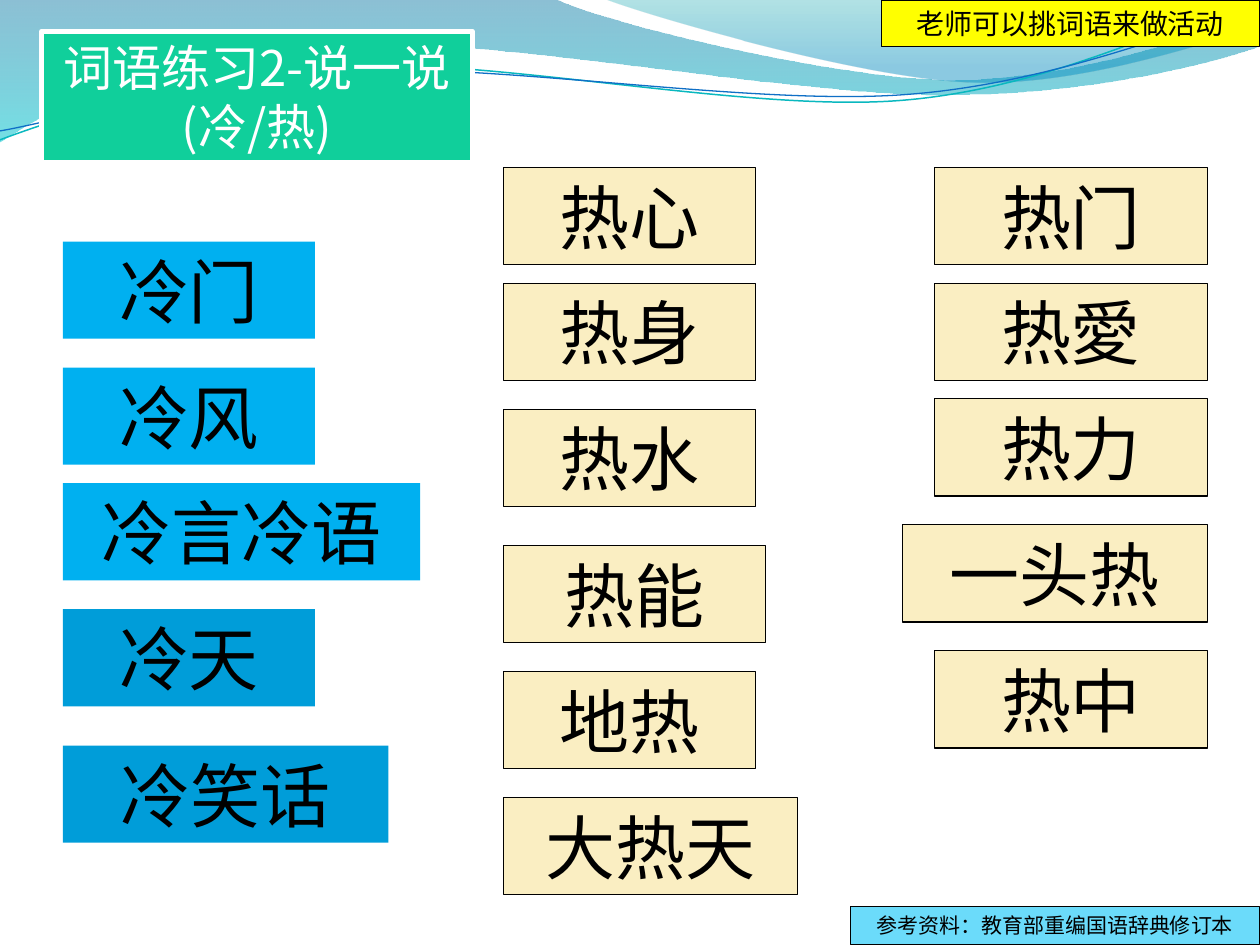
from lxml.etree import SubElement
from pptx import Presentation
from pptx.dml.color import RGBColor
from pptx.enum.shapes import MSO_SHAPE
from pptx.enum.text import MSO_ANCHOR, MSO_AUTO_SIZE, PP_ALIGN
from pptx.oxml.ns import qn
from pptx.util import Cm, Pt

FONT = "Noto Sans CJK SC"
BLACK = RGBColor(0x00, 0x00, 0x00)
WHITE = RGBColor(0xFF, 0xFF, 0xFF)
CREAM = RGBColor(0xFA, 0xEE, 0xC2)
SKY = RGBColor(0x00, 0xB0, 0xF0)
BLUE = RGBColor(0x00, 0x9D, 0xD9)
GREEN = RGBColor(0x10, 0xCF, 0x9B)
YELLOW = RGBColor(0xFF, 0xFF, 0x00)
AQUA = RGBColor(0x6B, 0xDB, 0xFA)
DEEP = RGBColor(0x00, 0x74, 0xA1)
CYAN = RGBColor(0x00, 0xC6, 0xCF)
TEAL = RGBColor(0x00, 0xA1, 0xA9)
AZURE = RGBColor(0x00, 0x8B, 0xBF)
MINT = RGBColor(0x0A, 0xB8, 0xBF)
NAVY = RGBColor(0x0F, 0x6F, 0xC6)

# Content, lengths in cm
TITLE = "词语练习2-说一说(冷/热)"
NOTES = [  # text, box, size, fill
    ("老师可以挑词语来做活动", (17.77, 0, 7.62, 0.94), 16, YELLOW),
    ("参考资料：教育部重编国语辞典修订本", (17.14, 18.28, 8.25, 0.76), 12, AQUA),
]
COLD = [  # word, top, width, fill
    ("冷门", 4.87, 5.08, SKY), ("冷风", 7.41, 5.08, SKY),
    ("冷言冷语", 9.74, 7.2, SKY), ("冷天", 12.28, 5.08, BLUE),
    ("冷笑话", 15.03, 6.56, BLUE),
]
HOT = [  # word, top, width
    ("热心", 3.38, 5.08), ("热身", 5.71, 5.08), ("热水", 8.25, 5.08),
    ("热能", 11, 5.29), ("地热", 13.54, 5.08), ("大热天", 16.08, 5.93),
]
MORE = [
    ("热门", 3.38, 5.5), ("热愛", 5.71, 5.5), ("热力", 8.04, 5.5),
    ("一头热", 10.58, 6.15), ("热中", 13.12, 5.5),
]
COLD_X, HOT_X, MORE_END, CARD_H = 1.27, 10.15, 24.34, 1.96

# Each path is a start, then lines (2 numbers) and curves (6 numbers)
WAVES = [  # path, stops of (place, colour, opacity in %)
    ([(0, 0), (11.18, -0.03), (12.09, 0.43, 16.87, 1.6, 19.25, 1.6),
      (21.67, 1.6, 24.33, 0.66, 25.4, 0.23), (25.43, 0.91),
      (24.97, 1.12, 22.1, 1.93, 18.95, 1.91),
      (15.8, 1.91, 9.7, 0.71, 6.53, 0.86),
      (3.28, 0.91, 1.17, 2.11, -0.03, 2.87), (0, 0)],
     [(0, DEEP, 45), (1, CYAN, 55)]),
    ([(12.17, -0.03), (12.93, 0.28, 17.32, 1.57, 19.53, 1.65),
      (21.74, 1.75, 24.41, 0.81, 25.4, 0.53), (25.4, 0), (12.17, -0.03)],
     [(0, TEAL, 30), (0.8, AZURE, 45)]),
]
CURVES = [  # path, colour, line width
    ([(0, 2.82), (1.22, 2.36, 4.01, 1.45, 7.04, 1.32),
      (10.03, 1.19, 15.06, 2.26, 18.11, 2.03),
      (21.16, 1.8, 23.83, 0.38, 25.35, -0.05)], MINT, 0.85),
    ([(0, 2.64), (1.19, 2.44, 4.17, 1.55, 7.19, 1.42),
      (10.24, 1.3, 15.16, 2.13, 18.21, 1.91),
      (21.23, 1.7, 23.9, 0.53, 25.4, 0.15)], NAVY, 0.75),
]

deck = Presentation()
deck.slide_width, deck.slide_height = Cm(25.4), Cm(19.05)
slide = deck.slides.add_slide(deck.slide_layouts[5])
shapes = slide.shapes


def draw(path, close):
    """Build an outline, then bend its curved parts."""
    ends = [(Cm(part[-2]), Cm(part[-1])) for part in path]
    pen = shapes.build_freeform(*ends[0])
    pen.add_line_segments(ends[1:], close=close)
    shape = pen.convert_to_shape()
    shape.shadow.inherit = False
    lines = list(shape._element.iter(qn("a:lnTo")))
    for node, part in zip(lines, path[1:]):
        if len(part) == 6:
            node.tag = qn("a:cubicBezTo")
            node.remove(node[0])
            for x, y in zip(part[::2], part[1::2]):
                SubElement(node, qn("a:pt"), x=str(Cm(x) - shape.left),
                           y=str(Cm(y) - shape.top))
    return shape


def write(shape, text, size=40, color=BLACK):
    """Put centred text in a shape."""
    frame = shape.text_frame
    frame.word_wrap = True
    frame.auto_size = MSO_AUTO_SIZE.NONE
    frame.vertical_anchor = MSO_ANCHOR.MIDDLE
    frame.margin_left = frame.margin_right = Cm(0.25)
    frame.margin_top = frame.margin_bottom = Cm(0.13)
    para = frame.paragraphs[0]
    para.alignment = PP_ALIGN.CENTER
    run = para.add_run()
    run.text = text
    font = run.font
    font.name, font.size, font.color.rgb = FONT, Pt(size), color
    SubElement(font._element, qn("a:ea"), typeface=FONT)


def paint(shape, fill, line=BLACK, width=0.75):
    shape.fill.solid()
    shape.fill.fore_color.rgb = fill
    if line is None:
        shape.line.fill.background()
    else:
        shape.line.color.rgb, shape.line.width = line, Pt(width)


def card(text, box, fill, size=40, line=BLACK):
    shape = shapes.add_shape(MSO_SHAPE.RECTANGLE, *map(Cm, box))
    shape.shadow.inherit = False
    paint(shape, fill, line)
    write(shape, text, size=size)


# Waves and thin curves along the top
for path, stops in WAVES:
    wave = draw(path, True)
    wave.line.fill.background()
    wave.fill.gradient()
    wave.fill.gradient_angle = 270
    for stop, (place, color, _) in zip(wave.fill.gradient_stops, stops):
        stop.position, stop.color.rgb = place, color
    for node, (_, _, part) in zip(wave._element.iter(qn("a:srgbClr")), stops):
        SubElement(node, qn("a:alpha"), val=str(part * 1000))
for path, color, width in CURVES:
    curve = draw(path, False)
    curve.fill.background()
    curve.line.color.rgb, curve.line.width = color, Pt(width)

# Title, raised above the waves
title = shapes.title
title.left, title.top, title.width, title.height = map(Cm, (0.84, 0.63, 8.68, 2.64))
paint(title, GREEN, WHITE, 3)
write(title, TITLE, size=28, color=WHITE)
shapes._spTree.append(title._element)

# Word cards
for word, top, width, fill in COLD:
    card(word, (COLD_X, top, width, CARD_H), fill, line=None)
for word, top, width in HOT:
    card(word, (HOT_X, top, width, CARD_H), CREAM)
for word, top, width in MORE:
    card(word, (MORE_END - width, top, width, CARD_H), CREAM)

# Corner notes
for text, box, size, fill in NOTES:
    card(text, box, fill, size=size)

deck.save("out.pptx")
